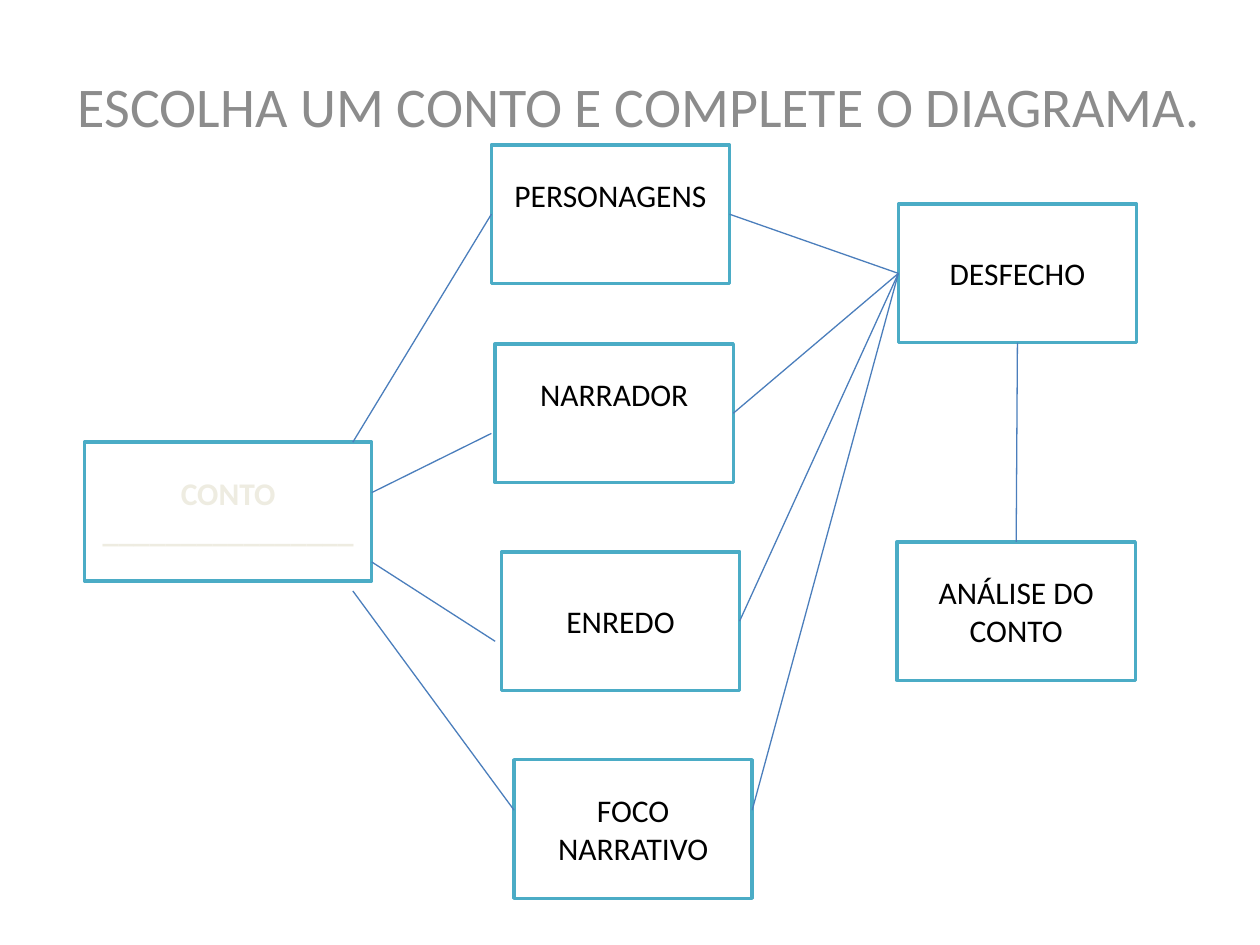
from lxml.etree import SubElement
from pptx import Presentation
from pptx.dml.color import RGBColor
from pptx.enum.shapes import MSO_CONNECTOR, MSO_SHAPE
from pptx.enum.text import MSO_ANCHOR, MSO_AUTO_SIZE, PP_ALIGN
from pptx.oxml.ns import qn
from pptx.util import Inches, Pt

COLORS = {"heading": "8C8C8C", "paper": "FFFFFF", "border": "4BACC6",
          "ink": "000000", "faint": "EEECE1", "link": "4B7EBC"}
SLIDE_W, SLIDE_H = Inches(10), Inches(7.5)
COLUMNS, ROWS = 100, 75
STEP_W, STEP_H = 18.9, 11
TOP, LEFT, BOTTOM, RIGHT = range(4)
LINE_HEIGHT = Inches(0.3)

# Narrative elements: text, left column, top row, lines kept free for the answer
ELEMENTS = [("PERSONAGENS", 39, 11.5, 1), ("NARRADOR", 39.3, 27.3, 1),
            ("ENREDO", 39.8, 43.8, 0), ("FOCO NARRATIVO", 40.8, 60.3, 0)]


def color(key):
    return RGBColor.from_string(COLORS[key])


def grid(column, row):
    return round(SLIDE_W * column / COLUMNS), round(SLIDE_H * row / ROWS)


def format_text(paragraph, size, ink, bold=False):
    paragraph.alignment = PP_ALIGN.CENTER
    for run in paragraph.runs:
        run.font.name = "Calibri"
        run.font.size = Pt(size)
        run.font.bold = bold
        run.font.color.rgb = color(ink)


def add_heading(slide, box):
    heading = slide.shapes.title
    heading.left, heading.top, heading.width, heading.height = box
    frame = heading.text_frame
    frame.text = "ESCOLHA UM CONTO E COMPLETE O DIAGRAMA."
    frame.word_wrap = True
    frame.auto_size = MSO_AUTO_SIZE.NONE
    frame.vertical_anchor = MSO_ANCHOR.TOP
    format_text(frame.paragraphs[0], 32, "heading")


def add_step(slide, text, box, free_lines=0, preset=MSO_SHAPE.FLOWCHART_PROCESS,
             ink="ink", bold=False):
    step = slide.shapes.add_shape(preset, *box)
    step.shadow.inherit = False
    step.fill.solid()
    step.fill.fore_color.rgb = color("paper")
    step.line.color.rgb = color("border")
    step.line.width = Pt(2)
    frame = step.text_frame
    frame.text = text
    frame.word_wrap = True
    frame.vertical_anchor = MSO_ANCHOR.MIDDLE
    frame.margin_bottom += free_lines * LINE_HEIGHT
    for paragraph in frame.paragraphs:
        format_text(paragraph, 18, ink, bold)
    return step


def add_link(slide, start, end):
    """Each end is a grid point, or a (shape, side) pair to be joined."""
    points = [(0, 0) if hasattr(place[0], "text_frame") else grid(*place)
              for place in (start, end)]
    link = slide.shapes.add_connector(MSO_CONNECTOR.STRAIGHT, *points[0], *points[1])
    for place, join in ((start, link.begin_connect), (end, link.end_connect)):
        if hasattr(place[0], "text_frame"):
            join(*place)
    link.line.color.rgb = color("link")
    link.line.width = Pt(0.75)
    SubElement(link._element.spPr, qn("a:effectLst"))


def add_diagram(slide):
    def step_box(column, row):
        return *grid(column, row), *grid(STEP_W, STEP_H)

    add_step(slide, "CONTO\n" + "_" * 16, (*grid(6.7, 35.1), *grid(22.8, STEP_H)),
             preset=MSO_SHAPE.RECTANGLE, ink="faint", bold=True)
    outcome = add_step(slide, "DESFECHO", step_box(71.3, 16.2))
    characters, narrator, plot, _ = steps = [
        add_step(slide, text, step_box(column, row), free_lines)
        for text, column, row, free_lines in ELEMENTS]
    analysis = add_step(slide, "ANÁLISE DO CONTO", step_box(71.2, 43))

    tale_links = [((28, 35.1), (characters, LEFT)), ((29.5, 39.1), (39, 34.4)),
                  ((29.5, 44.6), (39.3, 50.9)), ((28, 46.9), (40.8, 64.3))]
    for start, end in tale_links:
        add_link(slide, start, end)
    for start in [(step, RIGHT) for step in steps[:3]] + [(59.7, 64.3)]:
        add_link(slide, start, (outcome, LEFT))
    add_link(slide, (outcome, BOTTOM), (analysis, TOP))


def main():
    deck = Presentation()
    deck.slide_width, deck.slide_height = SLIDE_W, SLIDE_H
    slide = deck.slides.add_slide(deck.slide_layouts[5])
    add_heading(slide, (*grid(5.1, 5.2), *grid(91.3, 65.4)))
    add_diagram(slide)
    deck.save("out.pptx")


if __name__ == "__main__":
    main()
